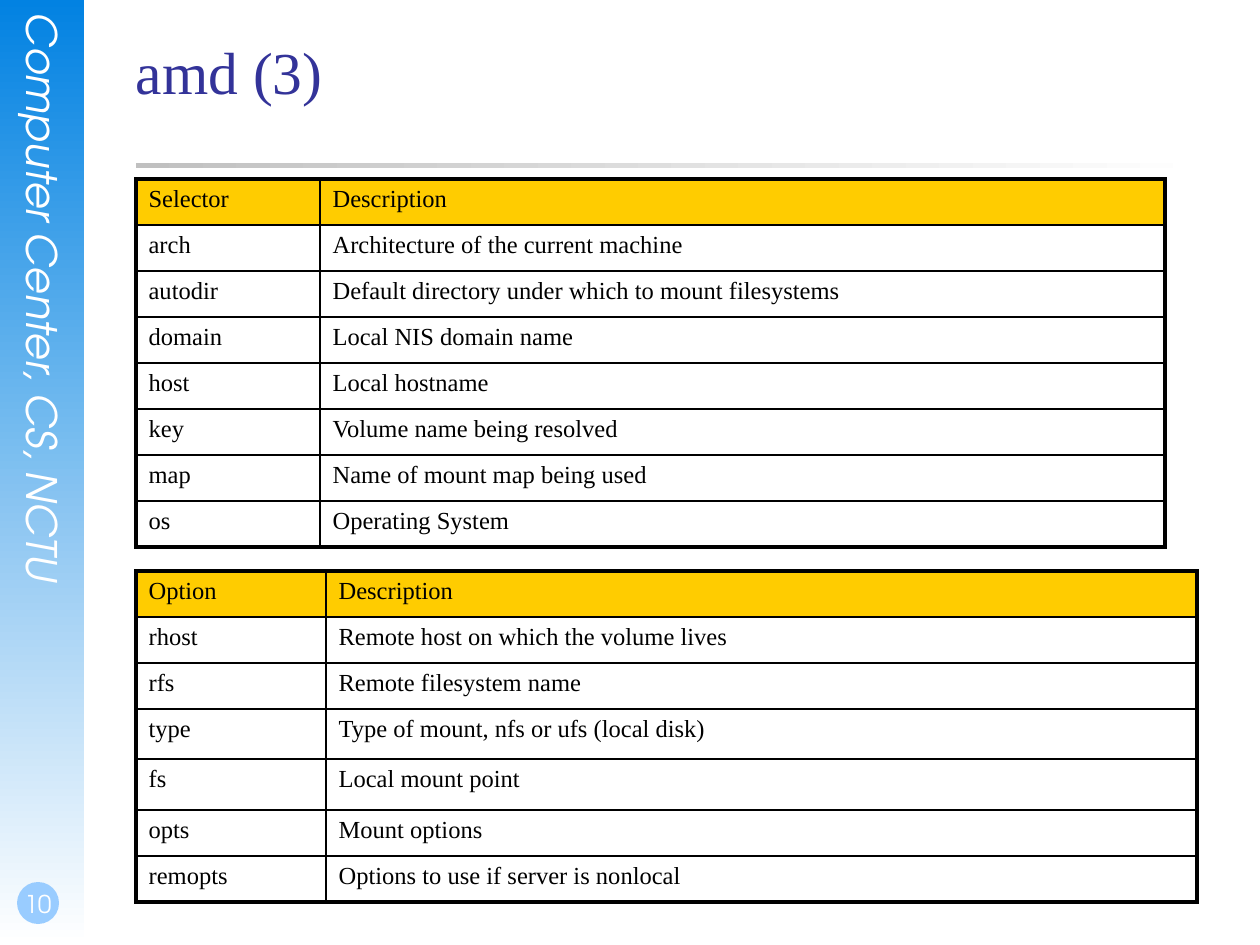
from lxml.etree import SubElement
from pptx import Presentation
from pptx.dml.color import RGBColor
from pptx.enum.shapes import MSO_SHAPE as Shape
from pptx.enum.text import MSO_ANCHOR as Anchor, PP_ALIGN as Align
from pptx.oxml.ns import qn
from pptx.util import Pt

PX = 914400 / 126
SERIF = "Times New Roman"
SANS = "TeX Gyre Adventor"

SELECTORS = [
    ("Selector", "Description"),
    ("arch", "Architecture of the current machine"),
    ("autodir", "Default directory under which to mount filesystems"),
    ("domain", "Local NIS domain name"),
    ("host", "Local hostname"),
    ("key", "Volume name being resolved"),
    ("map", "Name of mount map being used"),
    ("os", "Operating System"),
]
OPTIONS = [
    ("Option", "Description"),
    ("rhost", "Remote host on which the volume lives"),
    ("rfs", "Remote filesystem name"),
    ("type", "Type of mount, nfs or ufs (local disk)"),
    ("fs", "Local mount point"),
    ("opts", "Mount options"),
    ("remopts", "Options to use if server is nonlocal"),
]


def emu(*lengths):
    """Turn px lengths into EMU."""
    return [round(length * PX) for length in lengths]


def color(code):
    """Turn a hex string into a colour."""
    return RGBColor.from_string(code)


def style(para, face, size, code):
    """Set the font of a whole paragraph."""
    para.font.name = face
    para.font.size = Pt(size)
    para.font.color.rgb = color(code)


def add_panel(page, box, kind, colors, angle=0):
    """Draw a borderless shape with a solid or two-stop gradient fill."""
    panel = page.shapes.add_shape(kind, *emu(*box))
    panel.shadow.inherit = False
    panel.line.fill.background()
    if len(colors) == 1:
        panel.fill.solid()
        panel.fill.fore_color.rgb = color(colors[0])
        return
    panel.fill.gradient()
    panel.fill.gradient_angle = angle
    for stop, code in zip(panel.fill.gradient_stops, colors):
        stop.color.rgb = color(code)


def add_label(page, box, text, face, size, code, insets=(0, 0, 0, 0)):
    """Place one line of text and return its frame."""
    frame = page.shapes.add_textbox(*emu(*box)).text_frame
    frame.word_wrap = True
    (frame.margin_left, frame.margin_top,
     frame.margin_right, frame.margin_bottom) = emu(*insets)
    para = frame.paragraphs[0]
    para.text = text
    style(para, face, size, code)
    return frame


def add_sidebar(page, box):
    """Build the gradient strip with its vertical name and page number."""
    left, top, width, height = box
    add_panel(page, box, Shape.RECTANGLE, ["0282E2", "FFFFFF"], 270)
    name = add_label(page, (left + 19, top + 13, 50, 644),
                     "Computer Center, CS, NCTU", SANS, 24, "FFFFFF")
    name.paragraphs[0].font.italic = True
    name._txBody.bodyPr.set("vert", "eaVert")
    bottom = top + height
    add_panel(page, (left + 17, bottom - 63, 42, 42), Shape.OVAL, ["99CCFF"])
    number = add_label(page, (left, bottom - 84, 73, 63), "10",
                       SANS, 14, "FFFFFF", (3, 0, 0, 6))
    number.vertical_anchor = Anchor.BOTTOM
    number.paragraphs[0].alignment = Align.CENTER


def add_heading(page, box):
    """Build the title above its fading rule."""
    left, top, width, height = box
    add_panel(page, (left, top + 128, width, 5), Shape.RECTANGLE,
              ["C0C0C0", "FFFFFF"])
    add_label(page, box, "amd (3)", SERIF, 34, "333399")


def set_borders(cell, outer):
    """Draw cell edges, thick where they lie on the table's outside."""
    props = cell._tc.get_or_add_tcPr()
    for side, thick in zip("LRTB", outer):
        width = Pt(2.25 if thick else 1)
        line = SubElement(props, qn(f"a:ln{side}"), w=str(width))
        fill = SubElement(line, qn("a:solidFill"))
        SubElement(fill, qn("a:srgbClr"), val="000000")


def add_grid(page, left, top, widths, heights, rows):
    """Build a bordered table with a yellow heading row."""
    box = emu(left, top, sum(widths), sum(heights))
    table = page.shapes.add_table(len(rows), len(widths), *box).table
    table.first_row = table.horz_banding = False
    for column, width in zip(table.columns, emu(*widths)):
        column.width = width
    for row, height in zip(table.rows, emu(*heights)):
        row.height = height
    last_row, last_column = len(rows) - 1, len(widths) - 1
    for r, texts in enumerate(rows):
        for c, text in enumerate(texts):
            cell = table.cell(r, c)
            cell.text = text
            style(cell.text_frame.paragraphs[0], SERIF, 14, "000000")
            set_borders(cell, (c == 0, c == last_column,
                               r == 0, r == last_row))
            if r == 0:
                cell.fill.solid()
                cell.fill.fore_color.rgb = color("FFCC00")
            else:
                cell.fill.background()


def main():
    """Assemble and save the slide."""
    deck = Presentation()
    deck.slide_width, deck.slide_height = emu(1260, 945)
    page = deck.slides.add_slide(deck.slide_layouts[6])
    add_sidebar(page, (0, 0, 84, 945))
    add_heading(page, (136, 35, 1071, 158))
    add_grid(page, 136, 179, [184, 845], [46] * 8, SELECTORS)
    add_grid(page, 136, 571, [190, 871], [46, 46, 46, 50, 51, 46, 46], OPTIONS)
    deck.save("out.pptx")


if __name__ == "__main__":
    main()
